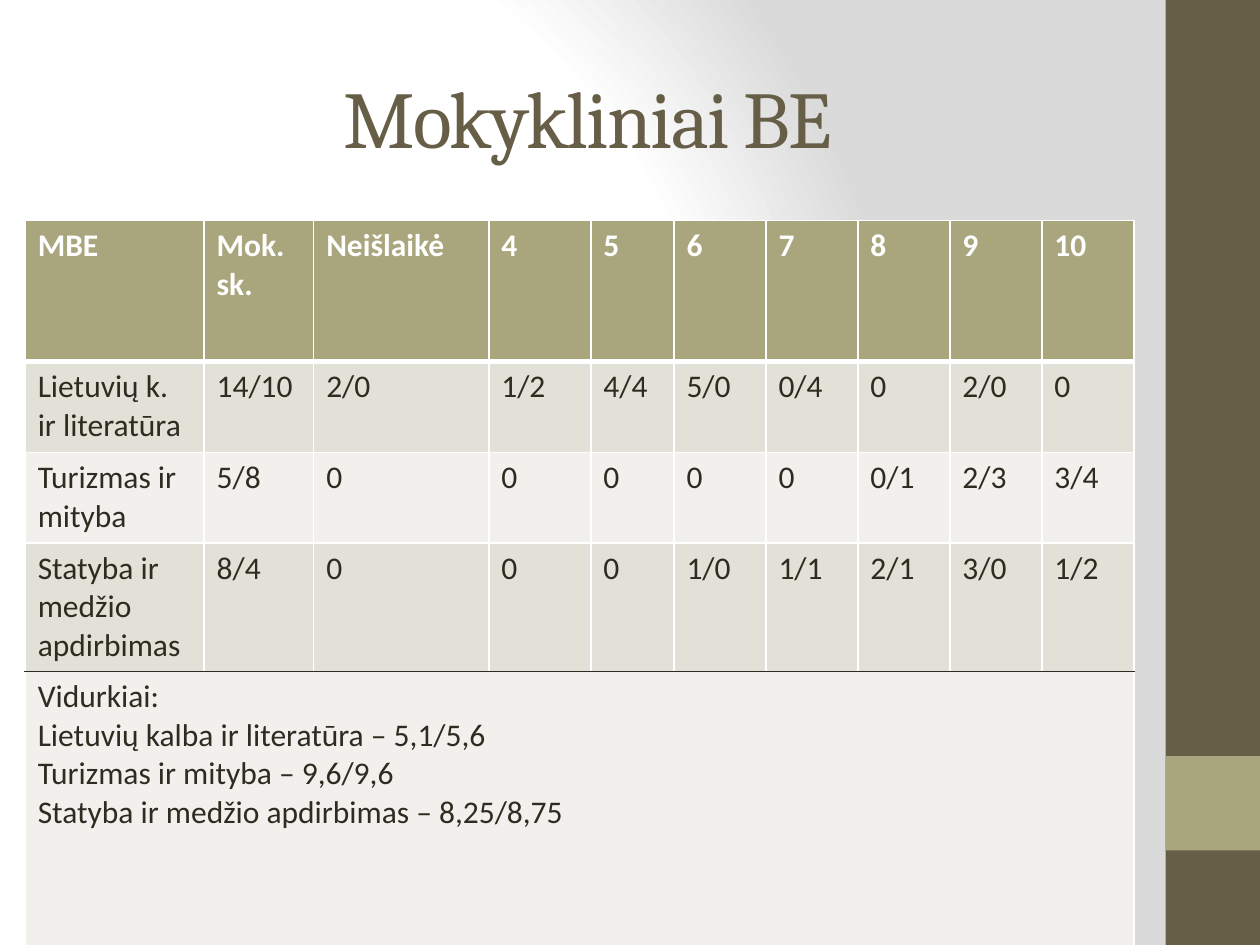
from pptx import Presentation
from pptx.dml.color import RGBColor
from pptx.enum import shapes, text
from pptx.oxml import parse_xml
from pptx.oxml.ns import nsdecls, qn
from pptx.util import Inches, Pt

BROWN, OLIVE, INK, WHITE = "675E47", "A9A57C", "2F2B20", "FFFFFF"
BANDS = ["E2E1D7", "F1F0EC"]
COLUMN_WIDTHS = [1.42, 0.87, 1.39, 0.81, 0.66] + [0.73] * 5
ROW_HEIGHTS = [1.12, 0.72, 0.72, 1.02, 2.76]
RESULTS = [
    ["MBE", "Mok. sk.", "Neišlaikė", "4", "5", "6", "7", "8", "9", "10"],
    ["Lietuvių k. ir literatūra", "14/10", "2/0", "1/2", "4/4", "5/0", "0/4", "0", "2/0", "0"],
    ["Turizmas ir mityba", "5/8", "0", "0", "0", "0", "0", "0/1", "2/3", "3/4"],
    ["Statyba ir medžio apdirbimas", "8/4", "0", "0", "0", "1/0", "1/1", "2/1", "3/0", "1/2"],
]
AVERAGES = "\n".join([
    "Vidurkiai:",
    "Lietuvių kalba ir literatūra – 5,1/5,6",
    "Turizmas ir mityba – 9,6/9,6",
    "Statyba ir medžio apdirbimas – 8,25/8,75",
])


def rgb(value):
    """Turn a hex string into a colour."""
    return RGBColor.from_string(value)


def set_background(slide):
    """Give the slide a circular gradient from white to grey."""
    stops = "".join(
        f'<a:gs pos="{place * 1000}"><a:srgbClr val="{color}"/></a:gs>'
        for place, color in [(0, WHITE), (75, WHITE), (100, "DADADA")]
    )
    background = parse_xml(
        f'<p:bg {nsdecls("p", "a")}><p:bgPr><a:gradFill rotWithShape="1">'
        f'<a:gsLst>{stops}</a:gsLst><a:path path="circle">'
        '<a:fillToRect l="20000" t="50000" r="100000" b="50000"/></a:path>'
        '</a:gradFill><a:effectLst/></p:bgPr></p:bg>'
    )
    slide.element.find(qn("p:cSld")).insert(0, background)


def add_band(slide, top, height, color):
    """Add a plain block to the right-hand side strip."""
    band = slide.shapes.add_shape(
        shapes.MSO_SHAPE.RECTANGLE, Inches(9.25), Inches(top), Inches(0.75), Inches(height)
    )
    band.shadow.inherit = False
    band.fill.solid()
    band.fill.fore_color.rgb = rgb(color)
    band.line.fill.background()


def style_text(frame, font_name, size, color, bold=False):
    """Set one font on every paragraph of a text frame."""
    for paragraph in frame.paragraphs:
        font = paragraph.font
        font.name, font.size, font.bold = font_name, Pt(size), bold
        font.color.rgb = rgb(color)


def add_title(slide, wording):
    """Add the centred slide title with tightened letters."""
    title = slide.shapes.add_textbox(Inches(0.5), Inches(0.3), Inches(8.33), Inches(1.25))
    frame = title.text_frame
    frame.word_wrap = True
    frame.vertical_anchor = text.MSO_ANCHOR.MIDDLE
    frame.text = wording
    frame.paragraphs[0].alignment = text.PP_ALIGN.CENTER
    style_text(frame, "Cambria", 46, BROWN)
    for properties in title.element.iter(qn("a:defRPr")):
        properties.set("spc", "-100")


def set_borders(cell, top, bottom):
    """Draw white side borders and the given (colour, points) top and bottom."""
    side = (WHITE, 1)
    borders = {"lnL": side, "lnR": side, "lnT": top, "lnB": bottom}
    properties = cell._tc.get_or_add_tcPr()
    for place, (edge, (color, width)) in enumerate(borders.items()):
        properties.insert(place, parse_xml(
            f'<a:{edge} {nsdecls("a")} w="{Pt(width)}"><a:solidFill>'
            f'<a:srgbClr val="{color}"/></a:solidFill></a:{edge}>'
        ))


def add_results(slide):
    """Add the exam results table with its merged row of averages."""
    frame = slide.shapes.add_table(
        len(ROW_HEIGHTS), len(COLUMN_WIDTHS), Inches(0.2), Inches(1.75),
        Inches(sum(COLUMN_WIDTHS)), Inches(sum(ROW_HEIGHTS)),
    )
    table = frame.table
    for column, width in zip(table.columns, COLUMN_WIDTHS):
        column.width = Inches(width)
    for row, height in zip(table.rows, ROW_HEIGHTS):
        row.height = Inches(height)

    last = len(RESULTS)
    table.cell(last, 0).merge(table.cell(last, len(COLUMN_WIDTHS) - 1))
    rules = [(WHITE, 1), (WHITE, 3), (WHITE, 1), (WHITE, 1), (INK, 1), (WHITE, 1)]
    wording = RESULTS + [[AVERAGES] + [""] * (len(COLUMN_WIDTHS) - 1)]
    for index, entries in enumerate(wording):
        header = index == 0
        for column, entry in enumerate(entries):
            cell = table.cell(index, column)
            if entry:
                cell.text = entry
            style_text(cell.text_frame, "Calibri", 18, WHITE if header else INK, header)
            cell.fill.solid()
            cell.fill.fore_color.rgb = rgb(OLIVE if header else BANDS[(index - 1) % 2])
            set_borders(cell, rules[index], rules[index + 1])


def main():
    """Build the slide and save it."""
    deck = Presentation()
    deck.slide_width, deck.slide_height = Inches(10), Inches(7.5)
    slide = deck.slides.add_slide(deck.slide_layouts[6])
    set_background(slide)
    add_band(slide, 0, 7.5, BROWN)
    add_band(slide, 6, 0.75, OLIVE)
    add_title(slide, "Mokykliniai BE")
    add_results(slide)
    deck.save("out.pptx")


if __name__ == "__main__":
    main()
